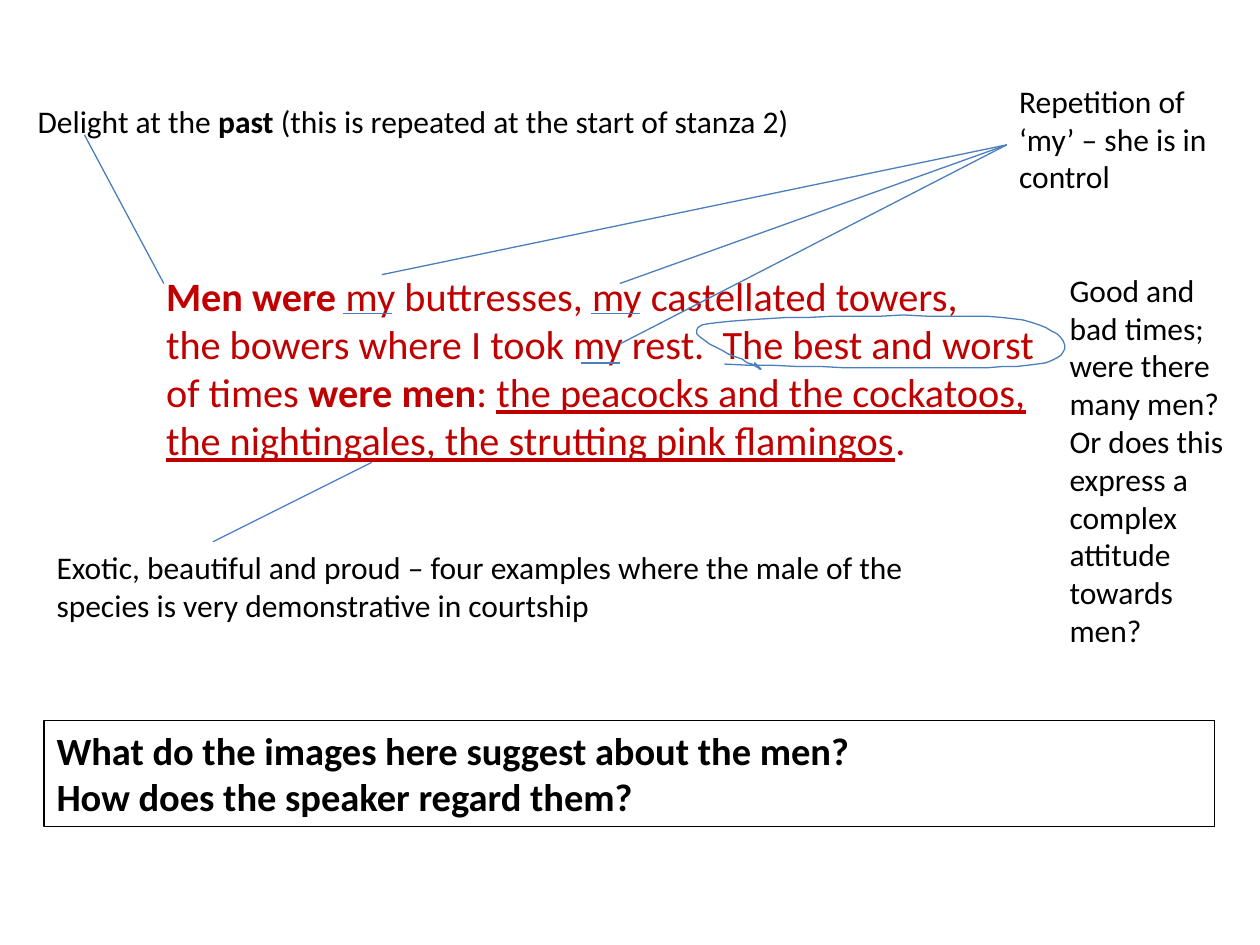
from lxml import etree
from pptx import Presentation
from pptx import util as u
from pptx.dml.color import RGBColor
from pptx.enum import shapes, text
from pptx.oxml.ns import qn

PX = 9144  # EMU per px, 100 px to the inch
FONT = "Calibri"
BLACK, RED, BLUE = "000000", "C00000", "4B7EBC"
CURVE_STEPS = 16

POEM = [
    [("Men were ", "b"), ("my buttresses, my castellated towers,", "")],
    [("the bowers where I took my rest.  The best and worst", "")],
    [("of times ", ""), ("were men", "b"), (": ", ""),
     ("the peacocks and the cockatoos,", "u")],
    [("the nightingales, the strutting pink flamingos", "u"), (".", "")],
]
# Left, right and height of each line under "my", within the poem box
MY_UNDERLINES = [(150, 189, 39), (347, 386, 39), (339, 370, 78)]
# Hand-drawn loop round "The best and worst", within the poem box
LOOP_START = (453, 79)
LOOP_CURVES = [
    ((558, 82), (663, 85), (701, 79)),
    ((739, 73), (725, 49), (682, 43)),
    ((639, 38), (474, 41), (440, 47)),
    ((407, 54), (474, 77), (480, 82)),
    ((486, 87), (477, 78), (477, 78)),
    ((477, 78), (477, 79), (478, 80)),
]
# Box, runs, pointer start within the box, pointer targets on the slide
NOTES = [
    ((20, 76, 623, 40),
     [("Delight at the ", ""), ("past", "b"),
      (" (this is repeated at the start of stanza 2)", "")],
     (47, 31), [(130, 225)]),
    ((799, 60, 173, 101),
     [("Repetition of ‘my’ – she is in control", "")],
     (0, 55), [(303, 218), (492, 225), (492, 273)]),
    ((839, 210, 142, 313),
     [("Good and bad times; were there many men? Or does this express "
       "a complex attitude towards men?", "")],
     (0, 0), []),
    ((35, 430, 748, 71),
     [("Exotic, beautiful and proud – four examples where the male of the "
       "species is very demonstrative in courtship", "")],
     (134, 0), [(295, 367)]),
]
QUESTIONS = [
    [("What do the images here suggest about the men?", "b")],
    [("How does the speaker regard them?", "b")],
]


def emu(*lengths):
    return [length * PX for length in lengths]


def rgb(colour):
    return RGBColor.from_string(colour)


def style_line(line, colour):
    line.color.rgb = rgb(colour)
    line.width = u.Pt(0.75)


def write(frame, paragraphs, size, colour):
    frame.word_wrap = True
    frame.vertical_anchor = text.MSO_ANCHOR.TOP
    for i, runs in enumerate(paragraphs):
        paragraph = frame.paragraphs[0] if i == 0 else frame.add_paragraph()
        paragraph.alignment = text.PP_ALIGN.LEFT
        font = paragraph.font
        font.name, font.size, font.color.rgb = FONT, u.Pt(size), rgb(colour)
        for words, style in runs:
            run = paragraph.add_run()
            run.text = words
            if style == "b":
                run.font.bold = True
            elif style == "u":
                run.font.underline = True


def add_line(slide, start, end):
    line = slide.shapes.add_connector(
        shapes.MSO_CONNECTOR.STRAIGHT, *emu(*start, *end))
    style_line(line.line, BLUE)
    etree.SubElement(line._element.spPr, qn("a:effectLst"))


def curve_points(start, curves):
    """Sample a chain of cubic Bézier curves."""
    points = []
    for c1, c2, end in curves:
        for step in range(1, CURVE_STEPS + 1):
            t = step / CURVE_STEPS
            s = 1 - t
            points.append(tuple(
                s**3 * a + 3 * s * s * t * b + 3 * s * t * t * c + t**3 * d
                for a, b, c, d in zip(start, c1, c2, end)))
        start = end
    return points


def add_poem(slide, box):
    left, top = box[:2]
    verse = slide.shapes.add_textbox(*emu(*box))
    write(verse.text_frame, POEM, 23, RED)
    for x1, x2, y in MY_UNDERLINES:
        add_line(slide, (left + x1, top + y), (left + x2, top + y))
    pen = slide.shapes.build_freeform(
        left + LOOP_START[0], top + LOOP_START[1], scale=PX)
    pen.add_line_segments(
        [(left + x, top + y) for x, y in curve_points(LOOP_START, LOOP_CURVES)],
        close=False)
    loop = pen.convert_to_shape()
    loop.shadow.inherit = False
    loop.fill.background()
    style_line(loop.line, BLUE)


def add_note(slide, box, runs, pointer, targets):
    note = slide.shapes.add_textbox(*emu(*box))
    write(note.text_frame, [runs], 18, BLACK)
    for target in targets:
        add_line(slide, target, (box[0] + pointer[0], box[1] + pointer[1]))


def add_questions(slide, box):
    panel = slide.shapes.add_shape(shapes.MSO_SHAPE.RECTANGLE, *emu(*box))
    panel.shadow.inherit = False
    panel.fill.background()
    style_line(panel.line, BLACK)
    write(panel.text_frame, QUESTIONS, 22, BLACK)


def main():
    deck = Presentation()
    deck.slide_width, deck.slide_height = emu(1000, 750)
    slide = deck.slides.add_slide(deck.slide_layouts[6])
    add_poem(slide, (122, 210, 764, 165))
    for note in NOTES:
        add_note(slide, *note)
    add_questions(slide, (35, 572, 929, 84))
    deck.save("out.pptx")


if __name__ == "__main__":
    main()
